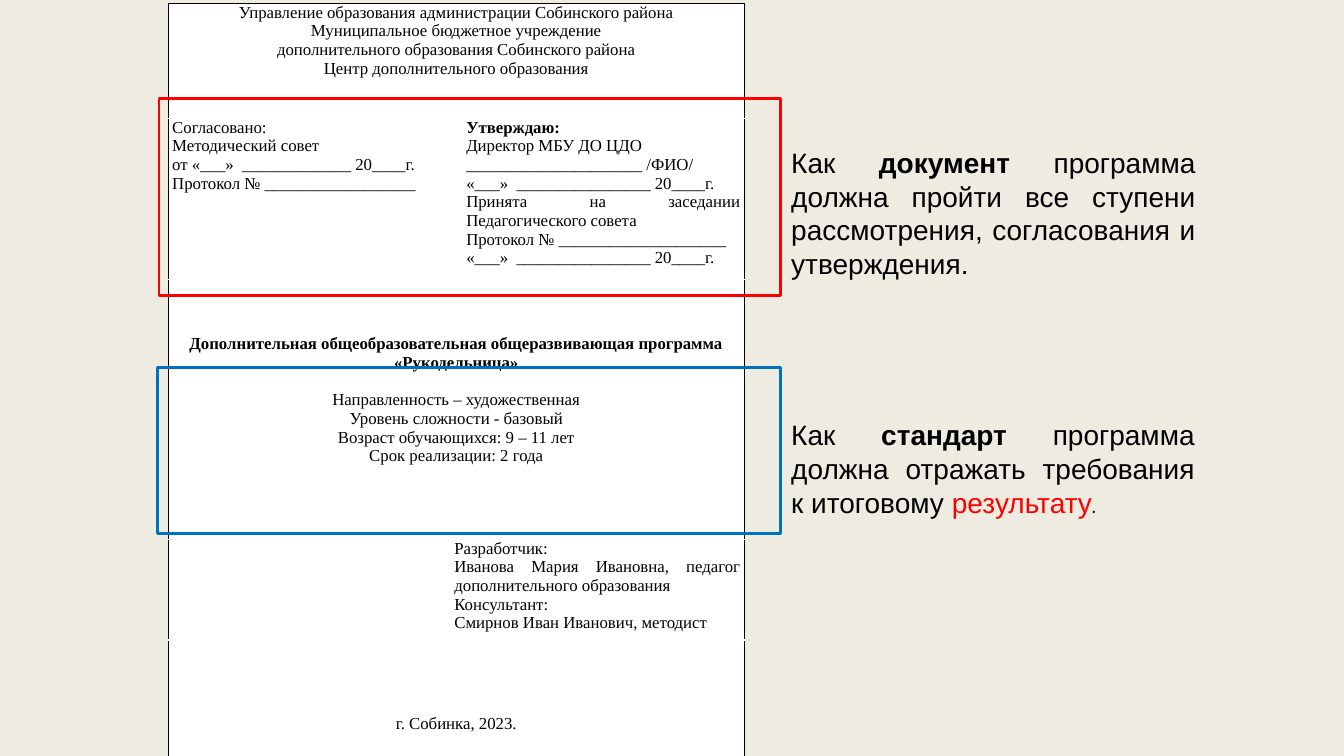
from dataclasses import dataclass
from lxml.etree import SubElement
from pptx import Presentation
from pptx.dml.color import RGBColor
from pptx.enum.shapes import MSO_SHAPE
from pptx.enum.text import MSO_ANCHOR, PP_ALIGN
from pptx.oxml.ns import qn
from pptx.util import Cm, Pt


@dataclass(frozen=True)
class Theme:
    back: str = "EEECE1"
    paper: str = "FFFFFF"
    ink: str = "000000"
    red: str = "FF0000"
    blue: str = "0070C0"
    serif: str = "Times New Roman"
    sans: str = "Arial"
    comic: str = "Comic Neue"
    form: int = 12
    note: int = 20
    rule: int = 1
    frame: int = 2


LEFT, MID, JUST = PP_ALIGN.LEFT, PP_ALIGN.CENTER, PP_ALIGN.JUSTIFY


class Page:
    def __init__(self, deck, theme):
        self.theme = theme
        self.slide = deck.slides.add_slide(deck.slide_layouts[6])
        self.paint(self.slide.background.fill, theme.back)

    def paint(self, fill, color):
        fill.solid()
        fill.fore_color.rgb = RGBColor.from_string(color)

    def style(self, para, size, face, align):
        para.alignment = align
        para.font.size = Pt(size)
        para.font.name = face
        para.font.color.rgb = RGBColor.from_string(self.theme.ink)

    def note(self, box, runs):
        frame = self.slide.shapes.add_textbox(*map(Cm, box)).text_frame
        frame.word_wrap = True
        frame.vertical_anchor = MSO_ANCHOR.MIDDLE
        para = frame.paragraphs[0]
        self.style(para, self.theme.note, None, JUST)
        for text, face, bold, color in runs:
            run = para.add_run()
            run.text = text
            run.font.name = face
            run.font.bold = bold
            run.font.color.rgb = RGBColor.from_string(color)

    def frame(self, box, color):
        rect = self.slide.shapes.add_shape(MSO_SHAPE.RECTANGLE, *map(Cm, box))
        rect.shadow.inherit = False
        rect.fill.background()
        self.paint(rect.line.fill, color)
        rect.line.width = Pt(self.theme.frame)

    def edge(self, cell, sides):
        for side in sides:
            line = SubElement(cell._tc.get_or_add_tcPr(), qn("a:ln" + side),
                              w=str(Pt(self.theme.rule)))
            fill = SubElement(line, qn("a:solidFill"))
            SubElement(fill, qn("a:srgbClr"), val=self.theme.ink)

    def grid(self, box, cols, rows, parts):
        shape = self.slide.shapes.add_table(len(rows), len(cols), *map(Cm, box))
        table = shape.table
        table.first_row = table.horz_banding = False
        for col, width in zip(table.columns, cols):
            col.width = Cm(width)
        for row, height in zip(table.rows, rows):
            row.height = Cm(height)
        for row, col, span, top, lines in parts:
            cell = table.cell(row, col)
            last = col + span - 1
            if span > 1:
                cell.merge(table.cell(row, last))
            # Outer border only
            ends = {"L": col == 0, "R": last == len(cols) - 1,
                    "T": row == 0, "B": row == len(rows) - 1}
            self.edge(cell, [side for side, on in ends.items() if on])
            self.paint(cell.fill, self.theme.paper)
            self.fill(cell, top, lines)

    def fill(self, cell, top, lines):
        cell.margin_left = cell.margin_right = Cm(0.1)
        cell.margin_top, cell.margin_bottom = Cm(top), 0
        frame = cell.text_frame
        for i, (text, align, bold, gap) in enumerate(lines):
            para = frame.add_paragraph() if i else frame.paragraphs[0]
            para.text = text
            self.style(para, self.theme.form, self.theme.serif, align)
            para.font.bold = bold
            para.space_before = Pt(gap)


def line(text, align=MID, bold=False, gap=0):
    return text, align, bold, gap


def main():
    theme = Theme()
    deck = Presentation()
    deck.slide_width, deck.slide_height = Cm(33.87), Cm(19.05)
    page = Page(deck, theme)

    # Title page of the programme
    head = [line(text) for text in (
        "Управление образования администрации Собинского района",
        "Муниципальное бюджетное учреждение",
        "дополнительного образования Собинского района",
        "Центр дополнительного образования")]
    agreed = [line(text, LEFT) for text in (
        "Согласовано:",
        "Методический совет",
        "от «___»  _____________ 20____г.",
        "Протокол № __________________")]
    passed = [
        line("Утверждаю:", LEFT, True),
        line("Директор МБУ ДО ЦДО", LEFT),
        line("_____________________ /ФИО/", LEFT),
        line("«___»  ________________ 20____г.", LEFT),
        line("Принята на заседании Педагогического совета", JUST),
        line("Протокол № ____________________", LEFT),
        line("«___»  ________________ 20____г.", JUST)]
    course = [
        line("Дополнительная общеобразовательная общеразвивающая программа",
             bold=True),
        line("«Рукодельница»", bold=True),
        line("Направленность – художественная", gap=13.3),
        line("Уровень сложности - базовый"),
        line("Возраст обучающихся: 9 – 11 лет"),
        line("Срок реализации: 2 года")]
    staff = [line(text, JUST) for text in (
        "Разработчик:",
        "Иванова Мария Ивановна, педагог дополнительного образования",
        "Консультант:",
        "Смирнов Иван Иванович, методист")]
    page.grid(
        (4.24, 0.08, 14.5, 19.1), (7.11, 0.28, 7.11),
        (2.9, 4.06, 6.55, 2.54, 3.05),
        [(0, 0, 3, 0, head),
         (1, 0, 2, 0, agreed), (1, 2, 1, 0, passed),
         (2, 0, 3, 1.4, course),
         (3, 0, 1, 0, []), (3, 1, 2, 0, staff),
         (4, 0, 3, 1.87, [line("г. Собинка, 2023.")])])

    # Notes on the right
    sans, ink = theme.sans, theme.ink
    page.note((19.69, 3.28, 10.69, 4.17), [
        ("Как ", sans, False, ink),
        ("документ", sans, True, ink),
        (" программа должна пройти все ступени рассмотрения, "
         "согласования и утверждения.", sans, False, ink)])
    page.note((19.69, 10.39, 10.67, 2.82), [
        ("Как ", sans, False, ink),
        ("стандарт", sans, True, ink),
        (" программа должна отражать требования к итоговому ",
         sans, False, ink),
        ("результату", sans, False, theme.red),
        (".", theme.comic, False, ink)])

    # Frames around the parts explained
    page.frame((4.01, 2.49, 15.67, 4.95), theme.red)
    page.frame((3.96, 9.27, 15.72, 4.17), theme.blue)
    deck.save("out.pptx")


if __name__ == "__main__":
    main()
